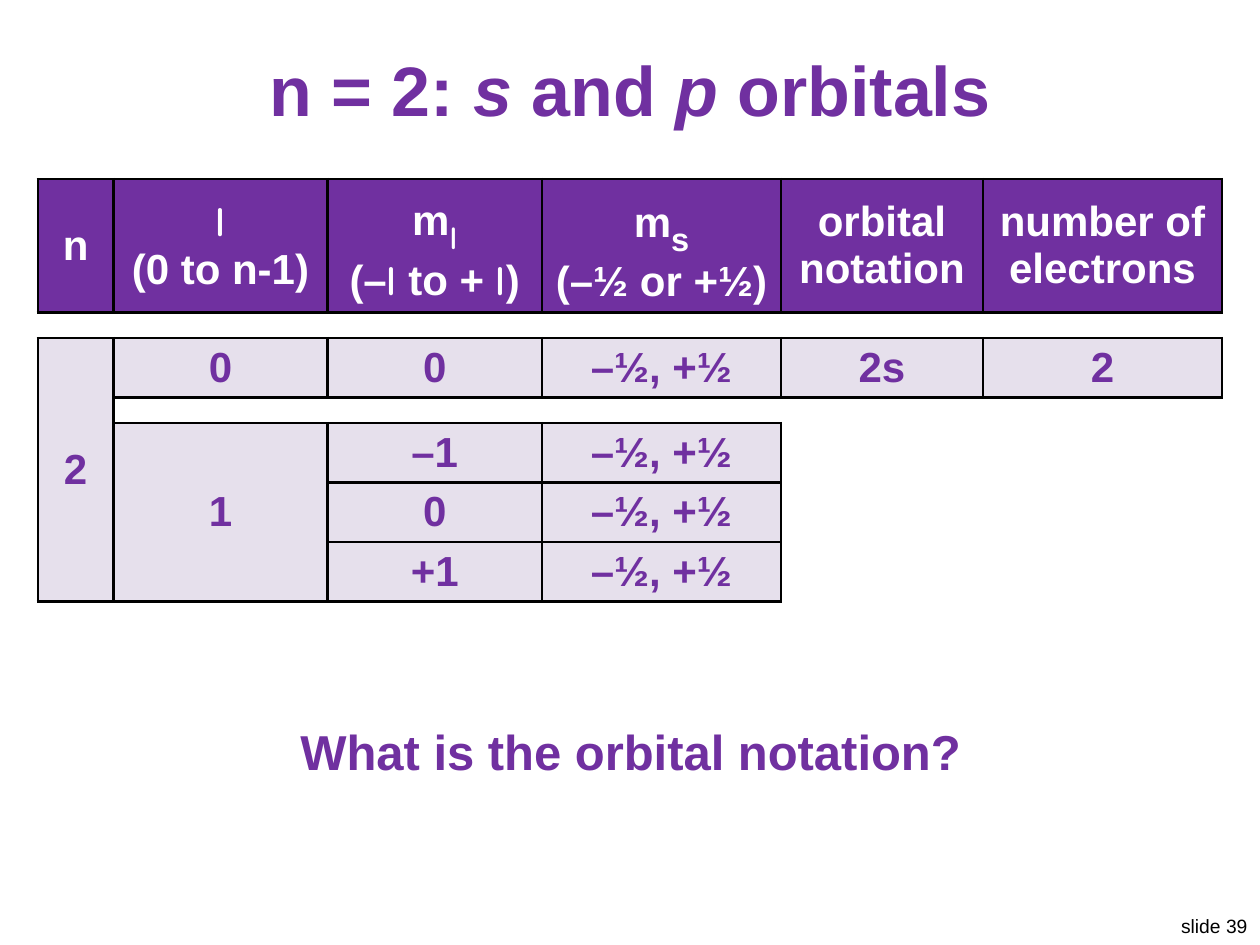
"""Build the slide on the n = 2 orbitals and their quantum numbers."""
import pptx
import pptx.dml.color
import pptx.enum.text
import pptx.oxml.ns
import pptx.util
from lxml import etree
from pptx.util import Inches

PURPLE = pptx.dml.color.RGBColor(0x70, 0x30, 0xA0)
LILAC = pptx.dml.color.RGBColor(0xE6, 0xE0, 0xEC)
WHITE = pptx.dml.color.RGBColor(0xFF, 0xFF, 0xFF)
BLACK = pptx.dml.color.RGBColor(0, 0, 0)
NO_STYLE = "{2D5ABB26-0587-4C30-8999-92F81FD0307C}"
CENTER = pptx.enum.text.PP_ALIGN.CENTER
RIGHT = pptx.enum.text.PP_ALIGN.RIGHT
MIDDLE = pptx.enum.text.MSO_ANCHOR.MIDDLE
qn = pptx.oxml.ns.qn


def add_run(paragraph, text, size, color, bold=True, font="Arial"):
    run = paragraph.add_run()
    run.text = text
    run.font.name = font
    run.font.size = pptx.util.Pt(size)
    run.font.bold = bold
    run.font.color.rgb = color
    return run


def add_border(cell):
    properties = cell._tc.get_or_add_tcPr()
    for side in ("lnL", "lnR", "lnT", "lnB"):
        line = etree.SubElement(properties, qn("a:" + side), w=str(pptx.util.Pt(1.5)))
        paint = etree.SubElement(line, qn("a:solidFill"))
        etree.SubElement(paint, qn("a:srgbClr"), val=str(BLACK))


presentation = pptx.Presentation()
presentation.slide_width = Inches(10)
presentation.slide_height = Inches(7.5)
slide = presentation.slides.add_slide(presentation.slide_layouts[5])

title = slide.shapes.title
title.left, title.top = Inches(0.2), Inches(0.3)
title.width, title.height = Inches(9.6), Inches(0.8)
title.text_frame.vertical_anchor = MIDDLE
heading = title.text_frame.paragraphs[0]
heading.alignment = CENTER
for text, italic in [("n = 2:", False), (" s", True), (" and ", False), ("p", True), (" orbitals", False)]:
    add_run(heading, text, 40, PURPLE).font.italic = italic

L = ("l", "Comic Neue", 24, 0)
SUB_L = ("l", "Comic Neue", 32, -25)
SUB_S = ("s", "Arial", 32, -25)
headers = [
    [["n"]],
    [[L], ["(0 to n-1)"]],
    [["m", SUB_L], ["(–", L, " to + ", L, ")"]],
    [["m", SUB_S], ["(–½ or +½)"]],
    [["orbital notation"]],
    [["number of electrons"]],
]
spins = "–½, +½"
body = [
    [None] * 6,
    ["2", "0", "0", spins, "2s", "2"],
    ["", None, None, None, None, None],
    ["", "1", "–1", spins, None, None],
    ["", "", "0", spins, None, None],
    ["", "", "+1", spins, None, None],
]
rows = [headers] + [[text and [[text]] if text else text for text in row] for row in body]
column_widths = [0.6, 1.7, 1.7, 1.9, 1.6, 1.9]
row_heights = [1.06, 0.2, 0.47, 0.2, 0.47, 0.47, 0.47]

quantum_numbers = slide.shapes.add_table(
    len(rows), len(column_widths), Inches(0.3), Inches(1.42),
    Inches(sum(column_widths)), Inches(sum(row_heights))).table
quantum_numbers.first_row = quantum_numbers.horz_banding = False
quantum_numbers._tbl.tblPr.find(qn("a:tableStyleId")).text = NO_STYLE
for column, width in zip(quantum_numbers.columns, column_widths):
    column.width = Inches(width)
for row, height in zip(quantum_numbers.rows, row_heights):
    row.height = Inches(height)

for row_index, row in enumerate(rows):
    is_header = row_index == 0
    for column_index, lines in enumerate(row):
        cell = quantum_numbers.cell(row_index, column_index)
        cell.vertical_anchor = MIDDLE
        if lines is None:
            cell.fill.background()
        else:
            add_border(cell)
            cell.fill.solid()
            cell.fill.fore_color.rgb = PURPLE if is_header else LILAC
        if not lines:
            etree.SubElement(cell.text_frame.paragraphs[0]._p, qn("a:endParaRPr"), sz="600")
            continue
        for line_index, pieces in enumerate(lines):
            frame = cell.text_frame
            paragraph = frame.add_paragraph() if line_index else frame.paragraphs[0]
            paragraph.alignment = CENTER
            for piece in pieces:
                text, font, size, baseline = (piece, "Arial", 24, 0) if isinstance(piece, str) else piece
                run = add_run(paragraph, text, size, WHITE if is_header else PURPLE, font=font)
                if baseline:
                    run.font._element.set("baseline", str(baseline * 1000))

for column_index, first_row in [(0, 2), (1, 4), (4, 4), (5, 4)]:
    quantum_numbers.cell(first_row, column_index).merge(quantum_numbers.cell(6, column_index))

for text, left, top, width, height, size, color, bold, alignment in [
    ("What is the orbital notation?", 2.25, 5.68, 5.51, 0.57, 28, PURPLE, True, CENTER),
    ("slide 39", 9.25, 7.21, 0.75, 0.29, 11, BLACK, False, RIGHT),
]:
    label = slide.shapes.add_textbox(Inches(left), Inches(top), Inches(width), Inches(height))
    label.text_frame.word_wrap = False
    label.text_frame.auto_size = pptx.enum.text.MSO_AUTO_SIZE.SHAPE_TO_FIT_TEXT
    paragraph = label.text_frame.paragraphs[0]
    paragraph.alignment = alignment
    add_run(paragraph, text, size, color, bold)

presentation.save("out.pptx")
